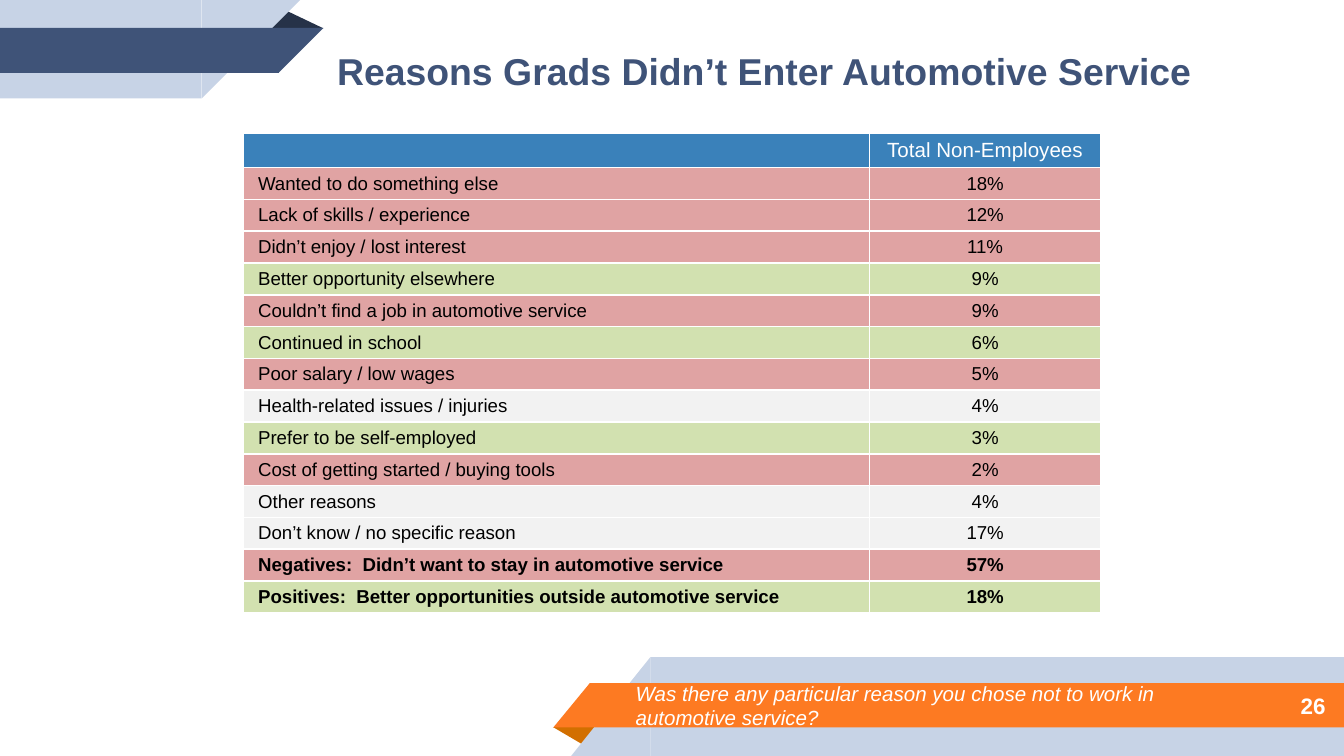
from dataclasses import dataclass
from typing import Optional

from lxml.etree import SubElement
from pptx import Presentation
from pptx.dml.color import RGBColor
from pptx.enum.shapes import MSO_SHAPE as Kind
from pptx.enum.text import MSO_ANCHOR as Anchor, PP_ALIGN as Align
from pptx.oxml.ns import qn
from pptx.util import Pt

WHITE = RGBColor(0xFF, 0xFF, 0xFF)
BLACK = RGBColor(0, 0, 0)
PALE = RGBColor(0xC7, 0xD3, 0xE6)
NAVY = RGBColor(0x3F, 0x53, 0x78)
DARK = RGBColor(0x26, 0x32, 0x48)
ORANGE = RGBColor(0xFD, 0x7A, 0x22)
RUST = RGBColor(0xD2, 0x6F, 0x00)
BLUE = RGBColor(0x3A, 0x81, 0xBA)
RED = RGBColor(0xE0, 0xA3, 0xA3)
GREEN = RGBColor(0xD2, 0xE1, 0xB0)
GREY = RGBColor(0xF2, 0xF2, 0xF2)


@dataclass
class Piece:
    kind: Kind
    left: float
    top: float
    width: float
    height: float
    color: RGBColor
    turn: int = 0
    flip: bool = False
    peak: Optional[float] = None


@dataclass
class Label:
    text: str
    left: float
    top: float
    width: float
    height: float
    size: float
    color: RGBColor
    bold: bool = False
    italic: bool = False
    align: Align = Align.LEFT


@dataclass
class Reason:
    text: str
    share: str
    color: RGBColor
    bold: bool = False


PIECES = [
    Piece(Kind.ISOSCELES_TRIANGLE, 296.2, 389.5, 25.2, 10, RUST, 180, peak=0.324),
    Piece(Kind.RECTANGLE, 348.5, 352, 371.5, 53, PALE),
    Piece(Kind.RIGHT_TRIANGLE, 306, 352, 42.5, 53, PALE, flip=True),
    Piece(Kind.RECTANGLE, 316, 366, 404, 23.7, ORANGE),
    Piece(Kind.RIGHT_TRIANGLE, 296.5, 366, 19.5, 23.7, ORANGE, flip=True),
    Piece(Kind.ISOSCELES_TRIANGLE, 142.3, 5.2, 31, 10, DARK, peak=0.324),
    Piece(Kind.RECTANGLE, 0, 0, 108, 52.7, PALE),
    Piece(Kind.RIGHT_TRIANGLE, 108, 0, 52.7, 52.7, PALE, 180, True),
    Piece(Kind.RECTANGLE, 0, 15, 149.4, 24, NAVY),
    Piece(Kind.RIGHT_TRIANGLE, 149.2, 15, 24, 24, NAVY, 180, True),
]

LABELS = [
    Label("Was there any particular reason you chose not to work in automotive service?",
          333.4, 365.2, 303.8, 25.2, 11, WHITE, italic=True),
    Label("26", 599.8, 365.2, 117.4, 25.2, 12, WHITE, bold=True, align=Align.RIGHT),
    Label("Reasons Grads Didn’t Enter Automotive Service",
          173.5, 7.5, 523.4, 60.5, 20, NAVY, bold=True),
]

REASONS = [
    Reason("Wanted to do something else", "18%", RED),
    Reason("Lack of skills / experience", "12%", RED),
    Reason("Didn’t enjoy / lost interest", "11%", RED),
    Reason("Better opportunity elsewhere", "9%", GREEN),
    Reason("Couldn’t find a job in automotive service", "9%", RED),
    Reason("Continued in school", "6%", GREEN),
    Reason("Poor salary / low wages", "5%", RED),
    Reason("Health-related issues / injuries", "4%", GREY),
    Reason("Prefer to be self-employed", "3%", GREEN),
    Reason("Cost of getting started / buying tools", "2%", RED),
    Reason("Other reasons", "4%", GREY),
    Reason("Don’t know / no specific reason", "17%", GREY),
    Reason("Negatives:  Didn’t want to stay in automotive service", "57%", RED, True),
    Reason("Positives:  Better opportunities outside automotive service", "18%", GREEN, True),
]


def style(para, size: float, color: RGBColor, align: Align,
          bold: bool = False, italic: bool = False) -> None:
    para.alignment = align
    font = para.font
    font.name, font.size = "Arial", Pt(size)
    font.bold, font.italic = bold, italic
    font.color.rgb = color


def draw_piece(slide, piece: Piece) -> None:
    shape = slide.shapes.add_shape(piece.kind, Pt(piece.left), Pt(piece.top),
                                   Pt(piece.width), Pt(piece.height))
    shape.shadow.inherit = False
    shape.fill.solid()
    shape.fill.fore_color.rgb = piece.color
    shape.line.fill.background()
    shape.rotation = piece.turn
    if piece.flip:
        shape._element.spPr.find(qn("a:xfrm")).set("flipH", "1")
    if piece.peak is not None:
        shape.adjustments[0] = piece.peak


def draw_label(slide, label: Label) -> None:
    box = slide.shapes.add_textbox(Pt(label.left), Pt(label.top),
                                   Pt(label.width), Pt(label.height))
    frame = box.text_frame
    frame.word_wrap = True
    frame.vertical_anchor = Anchor.MIDDLE
    frame.margin_left = frame.margin_right = Pt(7.2)
    frame.margin_top = frame.margin_bottom = Pt(7.2)
    frame.text = label.text
    style(frame.paragraphs[0], label.size, label.color, label.align,
          label.bold, label.italic)


def fill_cell(cell, text: str, back: RGBColor, size: float, color: RGBColor,
              align: Align, bold: bool = False) -> None:
    props = cell._tc.get_or_add_tcPr()
    for side in ("lnL", "lnR", "lnT", "lnB"):
        line = SubElement(props, qn(f"a:{side}"), w=str(Pt(1)))
        paint = SubElement(line, qn("a:solidFill"))
        SubElement(paint, qn("a:srgbClr"), val=str(WHITE))
    cell.fill.solid()
    cell.fill.fore_color.rgb = back
    cell.vertical_anchor = Anchor.MIDDLE
    cell.margin_left = Pt(7.8 if align == Align.LEFT else 5.2)
    cell.margin_right = Pt(5.2)
    cell.margin_top = cell.margin_bottom = Pt(2.5)
    para = cell.text_frame.paragraphs[0]
    if text:
        para.text = text
    style(para, size, color, align, bold)
    if not text:
        SubElement(para._p, qn("a:endParaRPr"), sz=str(size * 100))


def draw_table(slide, reasons: list[Reason]) -> None:
    head, step = 17.2, 16.58
    frame = slide.shapes.add_table(len(reasons) + 1, 2, Pt(130.5), Pt(71.6),
                                   Pt(459.3), Pt(head + step * len(reasons)))
    table = frame.table
    for col, width in zip(table.columns, (335.2, 124.1)):
        col.width = Pt(width)
    for row in table.rows:
        row.height = Pt(step)
    table.rows[0].height = Pt(head)
    for col, text in enumerate(("", "Total Non-Employees")):
        fill_cell(table.cell(0, col), text, BLUE, 11, WHITE, Align.CENTER)
    for row, item in enumerate(reasons, 1):
        fill_cell(table.cell(row, 0), item.text, item.color, 10, BLACK,
                  Align.LEFT, item.bold)
        fill_cell(table.cell(row, 1), item.share, item.color, 10, BLACK,
                  Align.CENTER, item.bold)


def main() -> None:
    deck = Presentation()
    deck.slide_width, deck.slide_height = Pt(720), Pt(405)
    slide = deck.slides.add_slide(deck.slide_layouts[6])
    for piece in PIECES:
        draw_piece(slide, piece)
    for label in LABELS:
        draw_label(slide, label)
    draw_table(slide, REASONS)
    deck.save("out.pptx")


if __name__ == "__main__":
    main()
